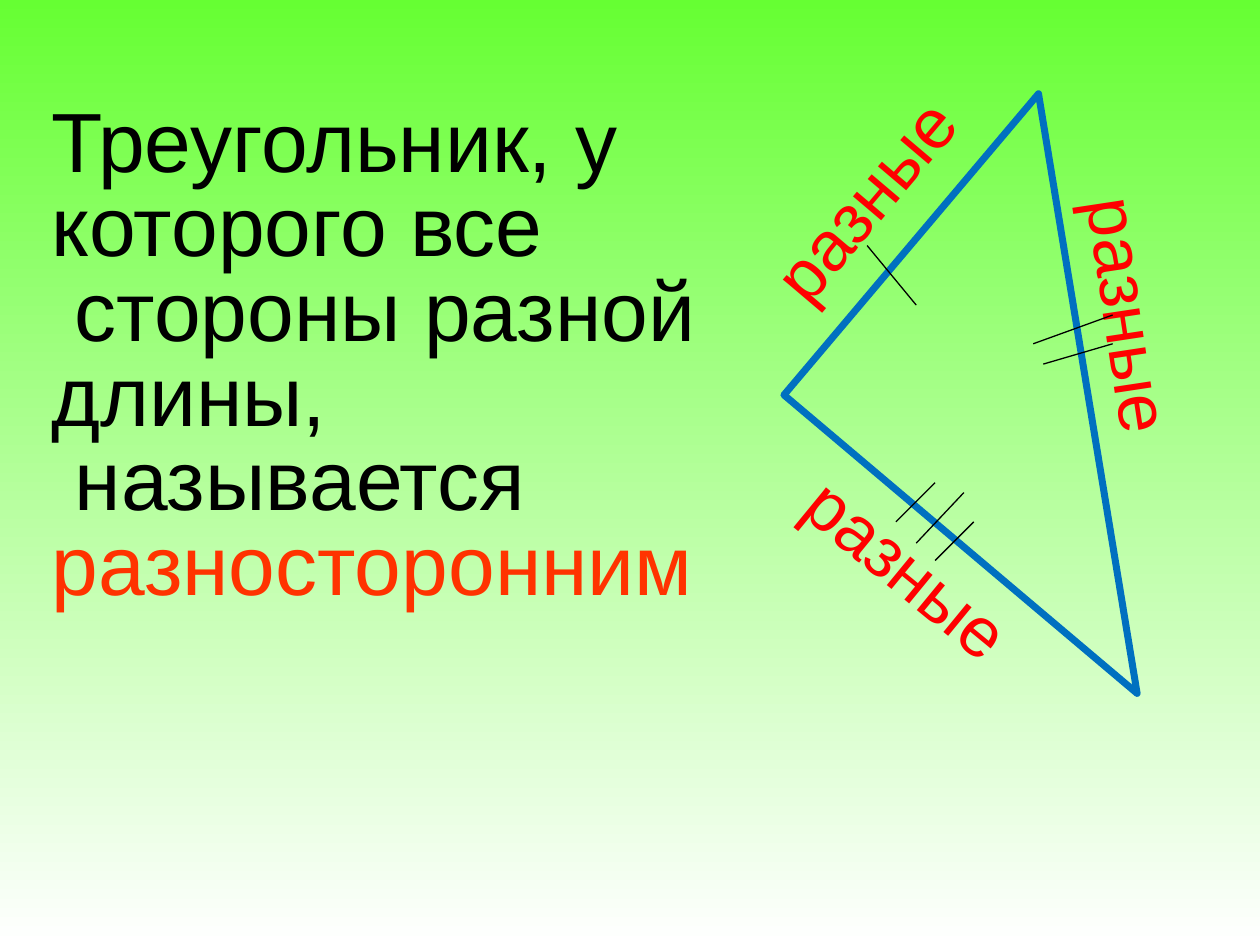
from lxml.etree import SubElement
from pptx import Presentation
from pptx.dml.color import RGBColor
from pptx.enum.shapes import MSO_CONNECTOR, MSO_SHAPE
from pptx.enum.text import MSO_ANCHOR, MSO_AUTO_SIZE, PP_ALIGN
from pptx.oxml.ns import qn
from pptx.util import Cm, Pt

GREEN = RGBColor(0x66, 0xFF, 0x33)
WHITE = RGBColor(0xFF, 0xFF, 0xFF)
BLACK = RGBColor(0, 0, 0)
ORANGE = RGBColor(0xFF, 0x33, 0x00)
RED = RGBColor(0xFF, 0, 0)
BLUE = RGBColor(0x00, 0x70, 0xC0)
FONT = "Arial"

# Content: paragraphs of (text, colour) runs; all lengths in centimetres
DEFINITION = [
    [("Треугольник, у которого все", BLACK)],
    [(" стороны разной длины,", BLACK)],
    [(" называется ", BLACK), ("разносторонним", ORANGE)],
]
DEFINITION_BOX = (0.79, 1.98, 13.89, 10.11)
TRIANGLE_BOX = (17.27, 3.96, 9.32, 7.95)
TRIANGLE_ROTATION = 40.2
SIDE_LABEL = "разные"
LABEL_SIZE = (6.93, 1.78)
LABELS = [  # left, top, rotation
    (13.94, 3.12, 310.3),
    (19.35, 5.46, 81.5),
    (14.86, 10.54, 39.4),
]
TICKS = [  # start x, start y, end x, end y
    (17.48, 4.95, 18.47, 6.15),
    (18.06, 10.52, 18.85, 9.73),
    (18.47, 10.95, 19.43, 9.93),
    (18.85, 11.3, 19.63, 10.52),
    (21.03, 7.34, 22.43, 6.93),
    (20.83, 6.93, 22.43, 6.35),
]


def lengths(values):
    return [Cm(value) for value in values]


def add_text_box(slide, box, paragraphs, size):
    """Add a wrapped text box from lists of (text, colour) runs."""
    shape = slide.shapes.add_textbox(*lengths(box))
    frame = shape.text_frame
    frame.word_wrap = True
    for index, runs in enumerate(paragraphs):
        paragraph = frame.paragraphs[0] if index == 0 else frame.add_paragraph()
        paragraph.font.name = FONT
        paragraph.font.size = Pt(size)
        for text, colour in runs:
            run = paragraph.add_run()
            run.text = text
            run.font.color.rgb = colour
    return shape


def main():
    presentation = Presentation()
    presentation.slide_width, presentation.slide_height = Cm(25.4), Cm(19.05)
    slide = presentation.slides.add_slide(presentation.slide_layouts[6])

    # Background running from green at the top to white
    background = slide.background.fill
    background.gradient()
    background.gradient_angle = 270
    for stop, colour, position in zip(background.gradient_stops, (GREEN, WHITE), (0, 1)):
        stop.color.rgb = colour
        stop.position = position

    # Definition
    definition = add_text_box(slide, DEFINITION_BOX, DEFINITION, 48)
    definition.text_frame.auto_size = MSO_AUTO_SIZE.SHAPE_TO_FIT_TEXT
    for paragraph in definition.text_frame.paragraphs:
        paragraph.line_spacing = 0.84

    # Triangle
    triangle = slide.shapes.add_shape(MSO_SHAPE.RIGHT_TRIANGLE, *lengths(TRIANGLE_BOX))
    triangle.rotation = TRIANGLE_ROTATION
    triangle.shadow.inherit = False
    triangle.fill.background()
    triangle.line.color.rgb = BLUE
    triangle.line.width = Pt(4)
    SubElement(triangle.line._get_or_add_ln(), qn("a:round"))

    # Side labels
    for left, top, rotation in LABELS:
        label = add_text_box(slide, (left, top, *LABEL_SIZE), [[(SIDE_LABEL, RED)]], 40)
        label.rotation = rotation
        label.text_frame.vertical_anchor = MSO_ANCHOR.MIDDLE
        label.text_frame.paragraphs[0].alignment = PP_ALIGN.CENTER

    # Tick marks across the sides
    for ends in TICKS:
        tick = slide.shapes.add_connector(MSO_CONNECTOR.STRAIGHT, *lengths(ends))
        tick.line.color.rgb = BLACK
        tick.line.width = Pt(0.75)
        SubElement(tick._element.spPr, qn("a:effectLst"))

    presentation.save("out.pptx")


if __name__ == "__main__":
    main()
